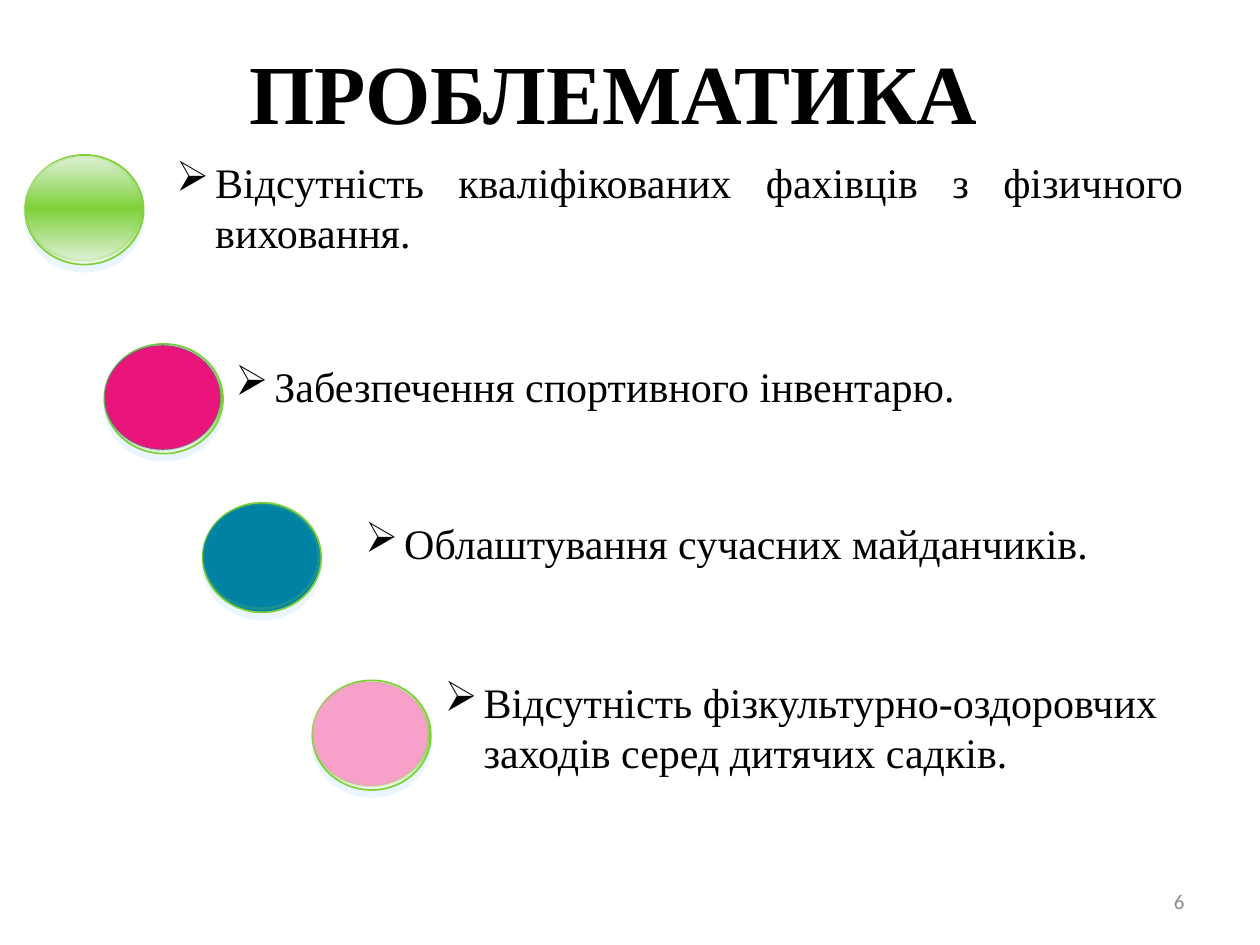
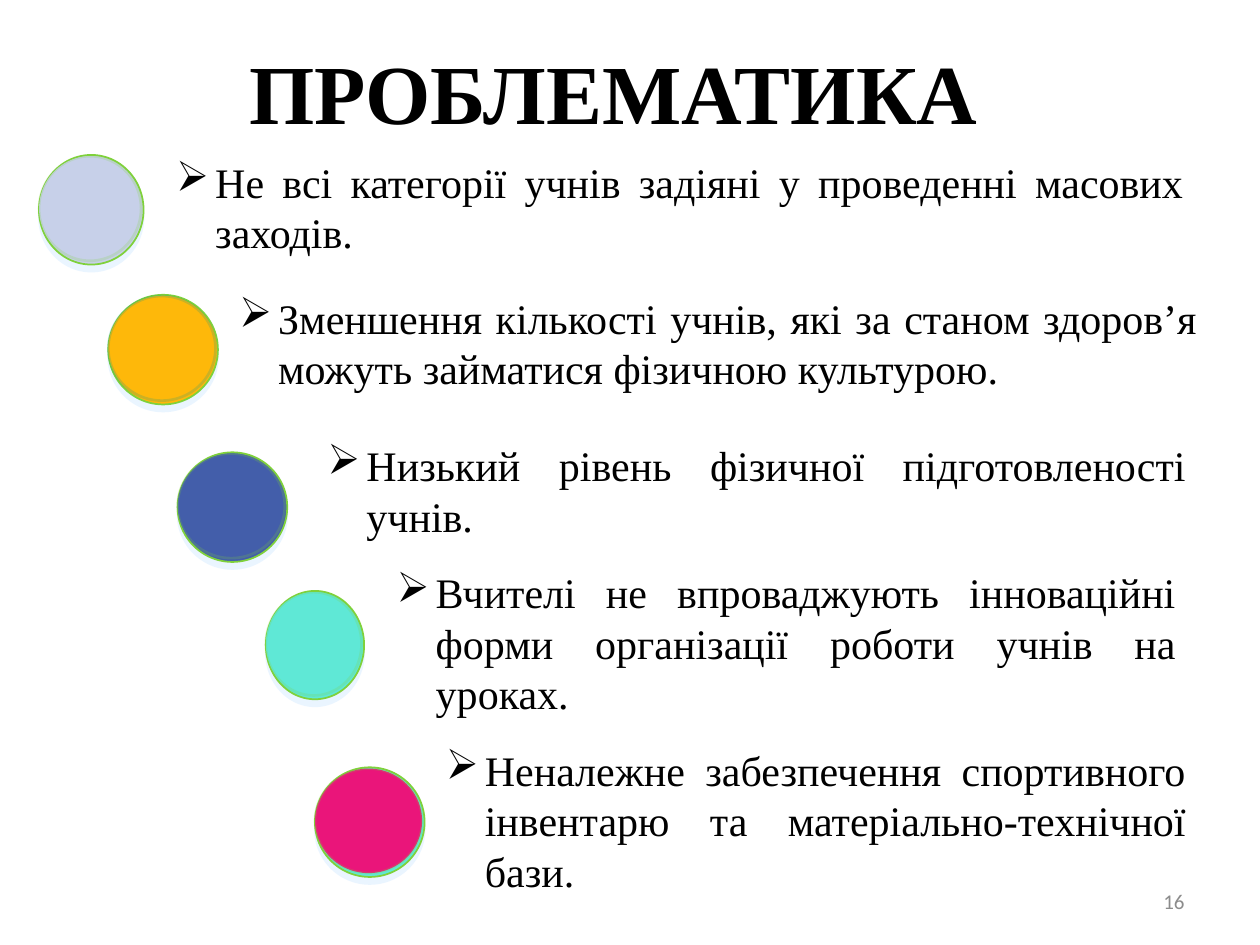
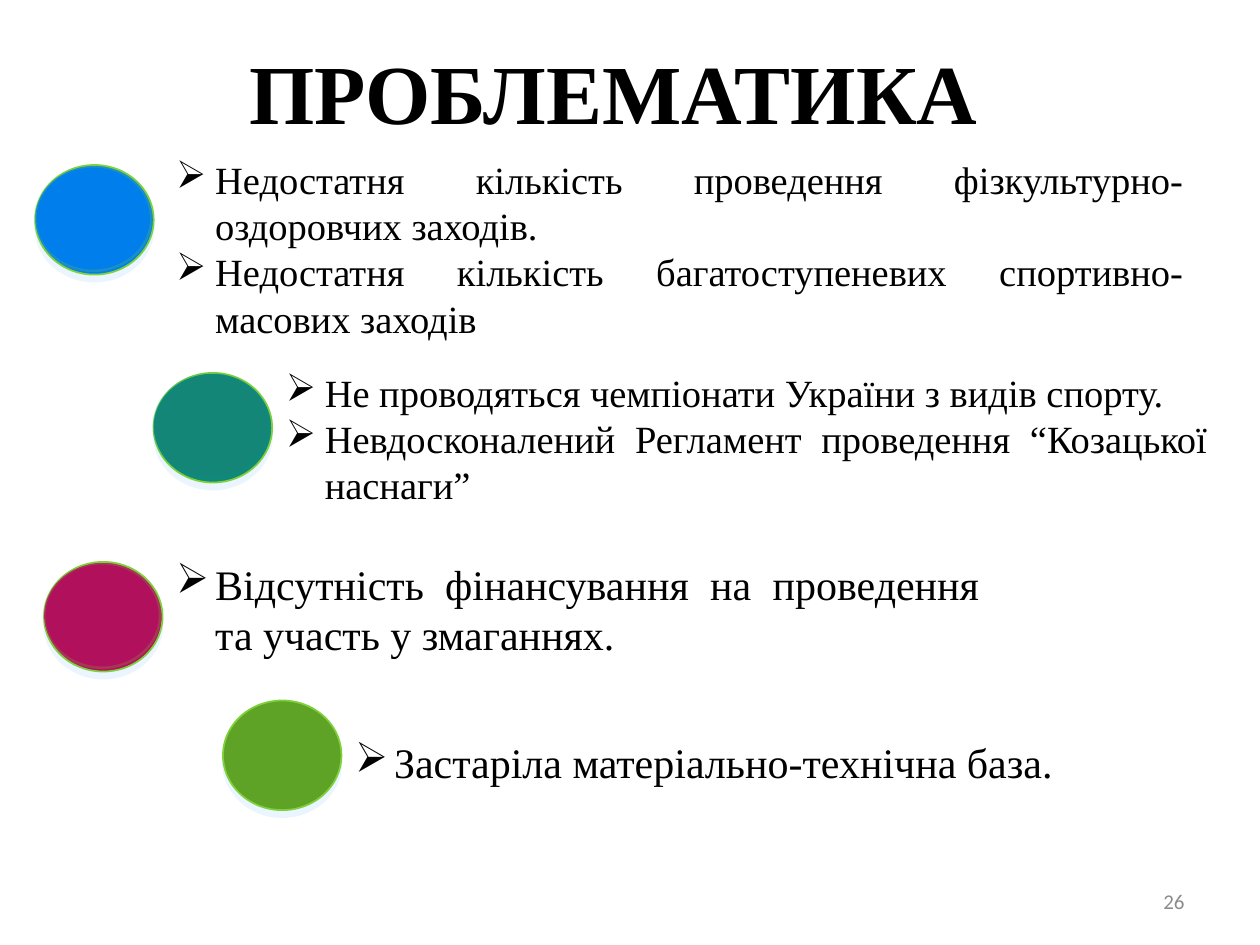
from copy import deepcopy
from dataclasses import dataclass

from lxml import etree
from pptx import Presentation
from pptx.dml.color import RGBColor
from pptx.enum.shapes import MSO_SHAPE as Shape
from pptx.enum.text import MSO_ANCHOR as Anchor, MSO_AUTO_SIZE as AutoSize, PP_ALIGN as Align
from pptx.oxml.ns import qn
from pptx.util import Inches, Pt

BLACK = RGBColor(0x00, 0x00, 0x00)
GREY = RGBColor(0x8C, 0x8C, 0x8C)
GREEN = RGBColor(0x7F, 0xD1, 0x3B)
TEAL = RGBColor(0x03, 0x97, 0x90)
PINK = RGBColor(0xEA, 0x15, 0x7A)
ROSE = RGBColor(0xF7, 0xA1, 0xCA)
OCEAN = RGBColor(0x00, 0x82, 0xA5)
LAVENDER = RGBColor(0xC7, 0xD0, 0xE9)
AMBER = RGBColor(0xFE, 0xB8, 0x0A)
INDIGO = RGBColor(0x43, 0x5E, 0xAA)
AQUA = RGBColor(0x5F, 0xE8, 0xD6)
BLUE = RGBColor(0x00, 0x7E, 0xEB)
PINE = RGBColor(0x13, 0x86, 0x77)
CRIMSON = RGBColor(0xB0, 0x10, 0x5C)
LEAF = RGBColor(0x5F, 0xA3, 0x26)
PALE_GREEN = RGBColor(0xF6, 0xFB, 0xF4)
LIGHT_GREEN = RGBColor(0xDD, 0xF0, 0xD5)
SHADOW = "D6ECFF"

RIM_GLOW = (PALE_GREEN, GREEN, PALE_GREEN)
FACE_GLOW = (LIGHT_GREEN, GREEN, LIGHT_GREEN)

TITLE = "ПРОБЛЕМАТИКА"
SERIF = "Times New Roman"
SANS = "Calibri"
INDENT = 0.31


@dataclass
class Problem:
    """A ball with its text; rim and face are a colour or three gradient colours."""
    ball: tuple
    rim: object
    face: object
    area: tuple
    lines: list
    size: int = 24
    align: Align = Align.JUSTIFY
    face_line: RGBColor = GREEN


PAGES = [
    (6, [
        Problem((0.2, 1.23, 0.94, 0.87), RIM_GLOW, FACE_GLOW, (1.3, 1.19, 8.19, 1.18),
                ["Відсутність кваліфікованих фахівців з фізичного виховання."]),
        Problem((0.83, 2.73, 0.94, 0.87), RIM_GLOW, PINK, (1.77, 2.81, 7.51, 0.5),
                ["Забезпечення спортивного інвентарю."], face_line=TEAL),
        Problem((1.61, 3.99, 0.94, 0.87), OCEAN, OCEAN, (2.8, 4.06, 6.57, 0.5),
                ["Облаштування сучасних майданчиків."]),
        Problem((2.48, 5.4, 0.94, 0.87), RIM_GLOW, ROSE, (3.43, 5.32, 6.3, 0.91),
                ["Відсутність фізкультурно-оздоровчих заходів серед дитячих садків."],
                align=Align.LEFT),
    ]),
    (16, [
        Problem((0.31, 1.23, 0.83, 0.87), LAVENDER, LAVENDER, (1.3, 1.19, 8.19, 1.18),
                ["Не всі категорії учнів задіяні у проведенні масових заходів."]),
        Problem((0.86, 2.34, 0.87, 0.87), AMBER, AMBER, (1.8, 2.27, 7.8, 0.91),
                ["Зменшення кількості учнів, які за станом здоров’я можуть "
                 "займатися фізичною культурою."], face_line=TEAL),
        Problem((1.41, 3.59, 0.87, 0.87), INDIGO, INDIGO, (2.5, 3.44, 7.01, 0.91),
                ["Низький рівень фізичної підготовленості учнів."]),
        Problem((2.11, 4.69, 0.78, 0.86), AQUA, AQUA, (3.05, 4.45, 6.38, 1.31),
                ["Вчителі не впроваджують інноваційні форми організації "
                 "роботи учнів на уроках."]),
        Problem((2.5, 6.09, 0.87, 0.87), AQUA, PINK, (3.44, 5.86, 6.07, 1.31),
                ["Неналежне забезпечення спортивного інвентарю та "
                 "матеріально-технічної бази."]),
    ]),
    (26, [
        Problem((0.28, 1.31, 0.94, 0.87), BLUE, BLUE, (1.3, 1.19, 8.19, 2.26),
                ["Недостатня кількість проведення фізкультурно- оздоровчих заходів.",
                 "Недостатня кількість багатоступеневих спортивно-масових заходів"],
                size=22),
        Problem((1.22, 2.96, 0.94, 0.87), PINE, PINE, (2.17, 2.88, 7.51, 1.21),
                ["Не проводяться чемпіонати України з видів спорту.",
                 "Невдосконалений Регламент проведення “Козацької наснаги”"],
                size=22, face_line=TEAL),
        Problem((0.35, 4.46, 0.94, 0.87), CRIMSON, CRIMSON, (1.3, 4.38, 6.57, 0.91),
                ["Відсутність фінансування на проведення та участь у змаганнях."]),
        Problem((1.77, 5.56, 0.94, 0.87), LEAF, None, (2.72, 5.8, 6.3, 0.5),
                ["Застаріла матеріально-технічна база."], align=Align.LEFT),
    ]),
]


def add_text(page, area, lines, size, align, font=SERIF, color=BLACK, bold=False,
             anchor=Anchor.TOP, bulleted=False):
    box = page.shapes.add_textbox(*map(Inches, area))
    frame = box.text_frame
    frame.word_wrap = True
    frame.vertical_anchor = anchor
    frame.auto_size = AutoSize.SHAPE_TO_FIT_TEXT if bulleted else AutoSize.NONE
    for index, line in enumerate(lines):
        para = frame.add_paragraph() if index else frame.paragraphs[0]
        para.alignment = align
        if bulleted:
            layout = para._p.get_or_add_pPr()
            layout.set("marL", str(Inches(INDENT)))
            layout.set("indent", str(-Inches(INDENT)))
            etree.SubElement(layout, qn("a:buChar")).set("char", "➢")
        span = para.add_run()
        span.text = line
        span.font.name = font
        span.font.size = Pt(size)
        span.font.bold = bold
        span.font.color.rgb = color


def paint(shape, paint_with):
    """Fill with one colour, or with a vertical gradient of three."""
    if isinstance(paint_with, RGBColor):
        shape.fill.solid()
        shape.fill.fore_color.rgb = paint_with
        return
    shape.fill.gradient()
    shape.fill.gradient_angle = 90
    stops = shape._element.spPr.find(qn("a:gradFill")).find(qn("a:gsLst"))
    stops.insert(1, deepcopy(stops[0]))
    for index, stop in enumerate(shape.fill.gradient_stops):
        stop.position = index / 2
        stop.color.rgb = paint_with[index]


def set_alpha(color, percent):
    etree.SubElement(color, qn("a:alpha")).set("val", str(percent * 1000))


def add_oval(group, area, filling, line_color, line_width):
    oval = group.shapes.add_shape(Shape.OVAL, *map(Inches, area))
    oval.shadow.inherit = False
    paint(oval, filling)
    oval.line.color.rgb = line_color
    oval.line.width = Pt(line_width)
    return oval


def add_ball(page, problem):
    left, top, width, height = problem.ball
    group = page.shapes.add_group_shape() if problem.face else page
    rim = add_oval(group, problem.ball, problem.rim, GREEN, 1)
    effects = rim._element.spPr.find(qn("a:effectLst"))
    shadow = etree.SubElement(effects, qn("a:outerShdw"), blurRad="0", dist=str(Pt(4)),
                              dir="5400000", algn="ctr", rotWithShape="0")
    tint = etree.SubElement(shadow, qn("a:srgbClr"), val=SHADOW)
    set_alpha(tint, 50)
    if problem.face:
        face = add_oval(group, (left, top + 0.01, width - 0.02, height - 0.04),
                        problem.face, problem.face_line, 1.5)
        outline = face._element.spPr.find(qn("a:ln"))
        set_alpha(next(outline.iter(qn("a:srgbClr"))), 20)


def add_page(deck, number, problems):
    page = deck.slides.add_slide(deck.slide_layouts[6])
    add_text(page, (0.2, 0.21, 9.34, 1.02), [TITLE], 48, Align.CENTER,
             bold=True, anchor=Anchor.MIDDLE)
    for problem in problems:
        add_text(page, problem.area, problem.lines, problem.size, problem.align,
                 bulleted=True)
        add_ball(page, problem)
    add_text(page, (7.17, 6.95, 2.33, 0.4), [str(number)], 12, Align.RIGHT,
             font=SANS, color=GREY, anchor=Anchor.MIDDLE)


def main():
    deck = Presentation()
    deck.slide_width = Inches(10)
    deck.slide_height = Inches(7.5)
    for number, problems in PAGES:
        add_page(deck, number, problems)
    deck.save("out.pptx")


if __name__ == "__main__":
    main()
